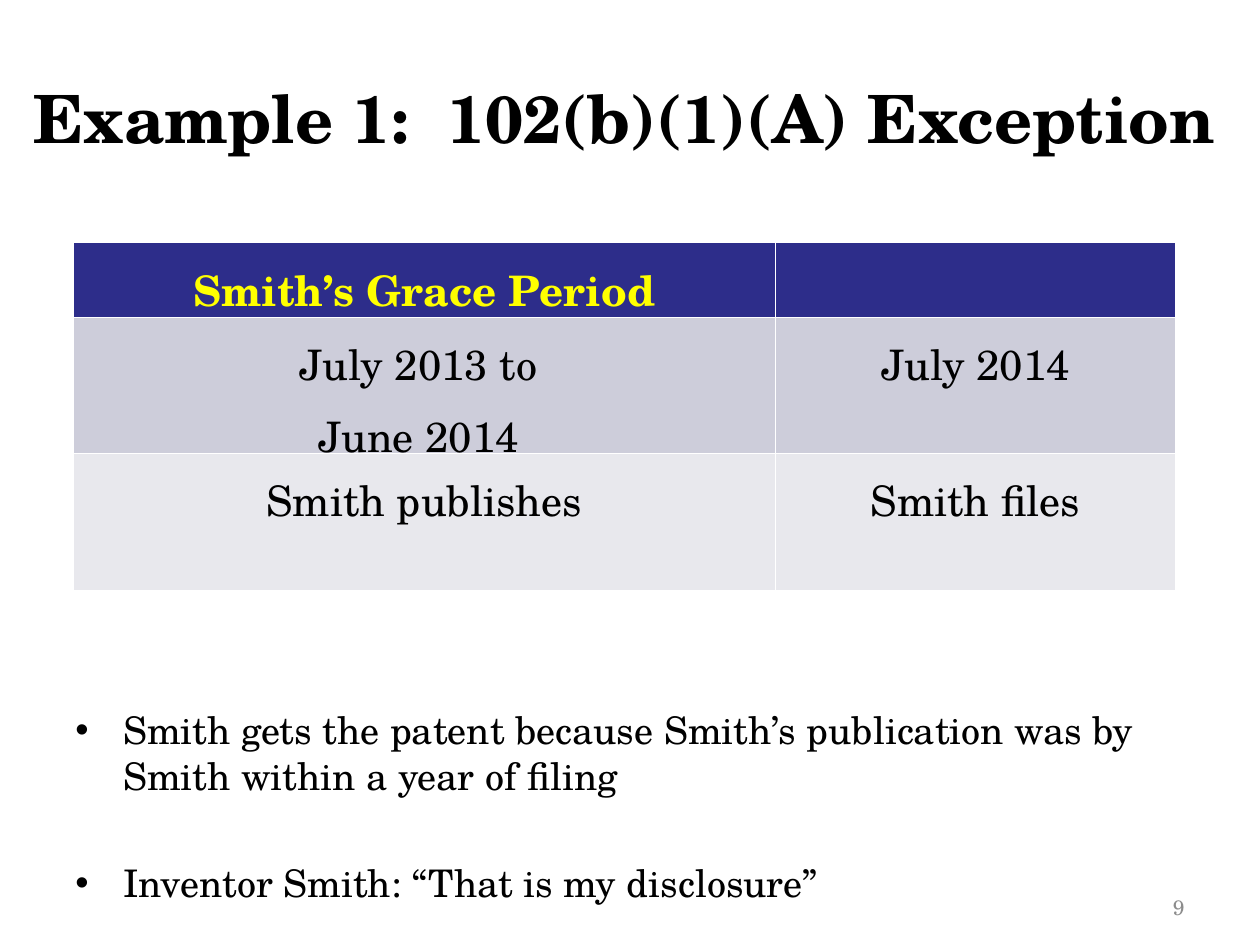
from lxml import etree
from pptx import Presentation
from pptx.dml.color import RGBColor
from pptx.enum import text
from pptx.oxml import ns
from pptx.util import Inches, Pt

FONT = "TeX Gyre Schola"
BLACK = RGBColor(0x00, 0x00, 0x00)
GRAY = RGBColor(0x8C, 0x8C, 0x8C)
YELLOW = RGBColor(0xFF, 0xFF, 0x00)
NAVY = RGBColor(0x2D, 0x2D, 0x8A)
LAVENDER = RGBColor(0xCD, 0xCD, 0xDA)
PALE_LAVENDER = RGBColor(0xE8, 0xE8, 0xED)

TITLE = "Example 1:  102(b)(1)(A) Exception"
TIMELINE = [
    ["Smith’s Grace Period", ""],
    ["July 2013 to \nJune 2014 ", "July 2014"],
    ["Smith publishes", "Smith files"],
]
ROW_FILLS = [NAVY, LAVENDER, PALE_LAVENDER]
COLUMN_SHARES = [0.637, 0.363]
ROW_HEIGHTS = [0.6, 1.08, 1.09]
POINTS = [
    "Smith gets the patent because Smith’s publication was by "
    "Smith within a year of filing",
    "Inventor Smith: “That is my disclosure”",
]


def style_paragraph(paragraph, size, color, bold=False, align=None):
    paragraph.alignment = align
    font = paragraph.font
    font.name = FONT
    font.size = Pt(size)
    font.bold = bold
    font.color.rgb = color


def add_text_frame(slide, box, anchor):
    frame = slide.shapes.add_textbox(*map(Inches, box)).text_frame
    frame.word_wrap = True
    frame.vertical_anchor = anchor
    return frame


def add_label(slide, box, content, anchor, size, color, bold, align):
    frame = add_text_frame(slide, box, anchor)
    frame.text = content
    style_paragraph(frame.paragraphs[0], size, color, bold, align)


def add_timeline(slide, box):
    table = slide.shapes.add_table(
        len(TIMELINE), len(COLUMN_SHARES), *map(Inches, box)
    ).table
    table.horz_banding = False
    for column, share in zip(table.columns, COLUMN_SHARES):
        column.width = Inches(box[2] * share)
    for index, (row, height) in enumerate(zip(table.rows, ROW_HEIGHTS)):
        row.height = Inches(height)
        header = index == 0
        for cell, content in zip(row.cells, TIMELINE[index]):
            cell.fill.solid()
            cell.fill.fore_color.rgb = ROW_FILLS[index]
            cell.margin_top = Inches(0.12)
            cell.text = content
            for number, paragraph in enumerate(cell.text_frame.paragraphs):
                if number:
                    paragraph.space_before = Pt(6)
                style_paragraph(paragraph, 24, YELLOW if header else BLACK,
                                header, text.PP_ALIGN.CENTER)


def add_bullet(paragraph):
    properties = paragraph._p.get_or_add_pPr()
    properties.set("marL", str(Inches(0.38)))
    properties.set("indent", str(-Inches(0.38)))
    etree.SubElement(properties, ns.qn("a:buFont"), typeface="Arial")
    etree.SubElement(properties, ns.qn("a:buChar"), char="•")


def add_points(slide, box):
    frame = add_text_frame(slide, box, text.MSO_ANCHOR.TOP)
    frame.text = "\n".join(POINTS)
    for number, paragraph in enumerate(frame.paragraphs):
        add_bullet(paragraph)
        if number:
            paragraph.space_before = Pt(35)
        style_paragraph(paragraph, 21.7, BLACK)


def build_slide(presentation):
    slide = presentation.slides.add_slide(presentation.slide_layouts[6])
    add_points(slide, (0.5, 5.56, 9, 1.7))
    add_label(slide, (7.17, 6.83, 2.33, 0.52), "9", text.MSO_ANCHOR.BOTTOM,
              12, GRAY, False, text.PP_ALIGN.RIGHT)
    add_timeline(slide, (0.58, 1.92, 8.75, sum(ROW_HEIGHTS)))
    add_label(slide, (0.08, 0.3, 9.75, 1.25), TITLE, text.MSO_ANCHOR.MIDDLE,
              38, BLACK, True, text.PP_ALIGN.CENTER)


def main():
    presentation = Presentation()
    presentation.slide_width = Inches(10)
    presentation.slide_height = Inches(7.5)
    build_slide(presentation)
    presentation.save("out.pptx")


if __name__ == "__main__":
    main()
